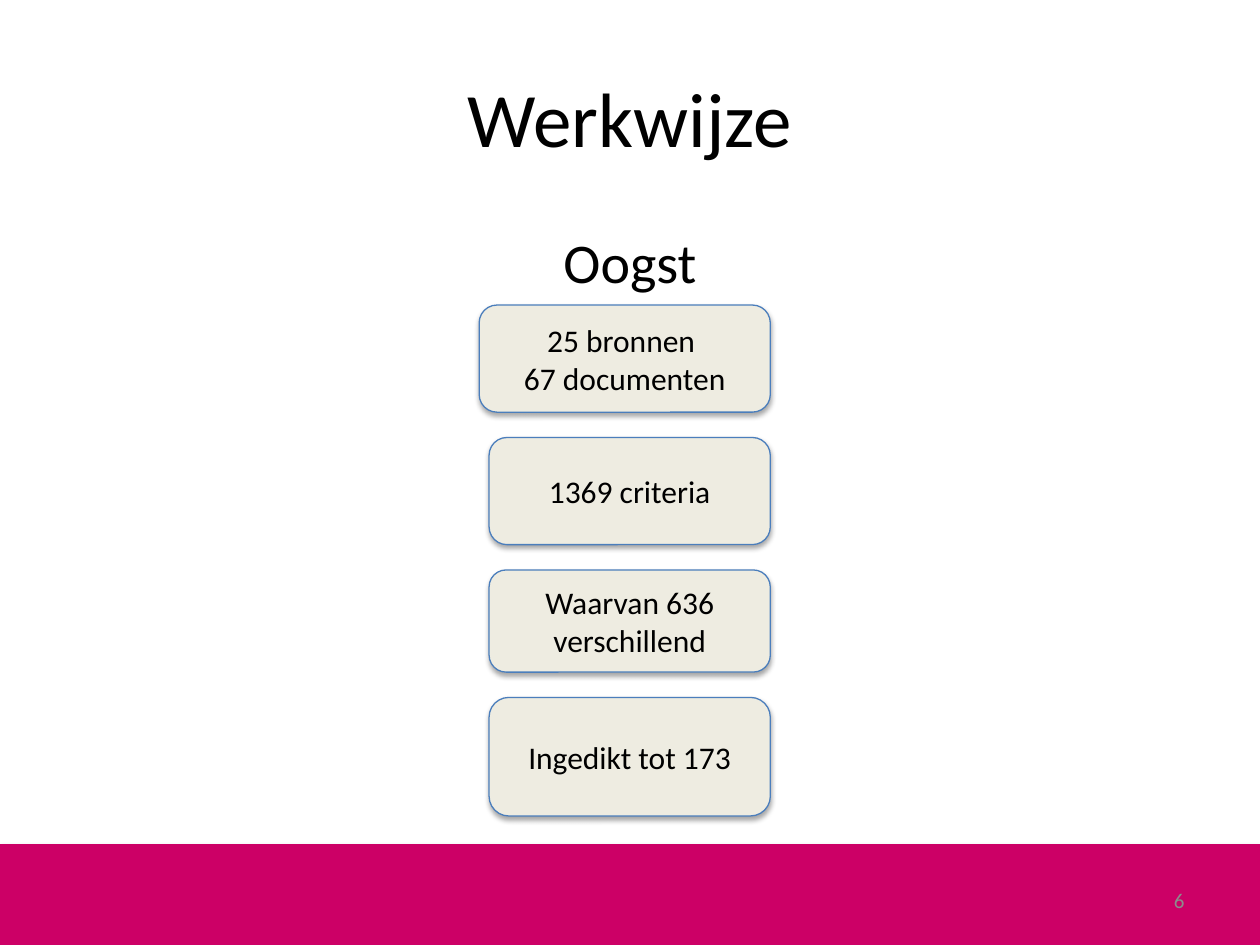
from lxml import etree
from pptx import Presentation
from pptx.dml.color import RGBColor
from pptx.enum.shapes import MSO_SHAPE
from pptx.enum.text import MSO_ANCHOR, PP_ALIGN
from pptx.oxml.ns import qn
from pptx.util import Cm, Pt

BLACK = RGBColor(0x00, 0x00, 0x00)
MAGENTA = RGBColor(0xCC, 0x00, 0x66)
CREAM = RGBColor(0xEE, 0xEC, 0xE1)
BLUE = RGBColor(0x4B, 0x7E, 0xBC)
GREY = RGBColor(0x8C, 0x8C, 0x8C)

FONT = "Calibri"
BOX_RIGHT, BOX_TOP, BOX_GAP = 15.53, 6.15, 0.51
STEPS = [  # text, width and height in cm
    ("25 bronnen \n67 documenten", 5.87, 2.16),
    ("1369 criteria", 5.67, 2.16),
    ("Waarvan 636 verschillend", 5.67, 2.06),
    ("Ingedikt tot 173", 5.67, 2.39),
]


def place(sp, left, top, width, height):
    sp.left, sp.top, sp.width, sp.height = map(Cm, (left, top, width, height))


def write(sp, text, size, color=BLACK, align=PP_ALIGN.CENTER, anchor=MSO_ANCHOR.MIDDLE):
    tf = sp.text_frame
    tf.text = text
    tf.word_wrap = True
    tf.vertical_anchor = anchor
    for p in tf.paragraphs:
        p.alignment = align
        p.space_before = Pt(0)
        for r in p.runs:
            r.font.name = FONT
            r.font.size = Pt(size)
            r.font.color.rgb = color


def remove_bullet(p):
    pPr = p._p.get_or_add_pPr()
    pPr.set("marL", "0")
    pPr.set("indent", "0")
    etree.SubElement(pPr, qn("a:buNone"))


def add_soft_shadow(sp):
    """Give the shape a short, blurred shadow straight below it."""
    sp.shadow.inherit = False
    effects = sp._element.spPr.find(qn("a:effectLst"))
    shadow = etree.SubElement(effects, qn("a:outerShdw"), blurRad=str(Pt(3.1)),
                              dist=str(Pt(1.8)), dir="5400000", rotWithShape="0")
    color = etree.SubElement(shadow, qn("a:srgbClr"), val="000000")
    etree.SubElement(color, qn("a:alpha"), val="35000")


def add_band(s):
    sp = s.shapes.add_shape(MSO_SHAPE.RECTANGLE, 0, Cm(17.02), Cm(25.4), Cm(2.03))
    sp.fill.solid()
    sp.fill.fore_color.rgb = MAGENTA
    sp.line.fill.background()
    add_soft_shadow(sp)
    s.shapes._spTree.insert(2, sp._element)  # behind the placeholders


def add_step(s, text, top, width, height):
    sp = s.shapes.add_shape(MSO_SHAPE.ROUNDED_RECTANGLE, Cm(BOX_RIGHT - width),
                            Cm(top), Cm(width), Cm(height))
    sp.fill.solid()
    sp.fill.fore_color.rgb = CREAM
    sp.line.color.rgb = BLUE
    sp.line.width = Pt(0.75)
    add_soft_shadow(sp)
    write(sp, text, 18)


def add_page_number(s, number):
    sp = s.shapes.add_textbox(Cm(18.2), Cm(17.65), Cm(5.93), Cm(1.01))
    write(sp, number, 12, GREY, PP_ALIGN.RIGHT)


def main():
    prs = Presentation()
    prs.slide_width, prs.slide_height = Cm(25.4), Cm(19.05)
    s = prs.slides.add_slide(prs.slide_layouts[1])
    add_band(s)

    title, body = s.shapes.title, s.placeholders[1]
    place(title, 1.27, 0.76, 22.86, 3.18)
    write(title, "Werkwijze", 44)
    place(body, 1.27, 4.45, 22.86, 12.57)
    write(body, "Oogst", 32, anchor=MSO_ANCHOR.TOP)
    remove_bullet(body.text_frame.paragraphs[0])

    top = BOX_TOP
    for text, width, height in STEPS:
        add_step(s, text, top, width, height)
        top += height + BOX_GAP
    add_page_number(s, "6")
    prs.save("out.pptx")


if __name__ == "__main__":
    main()
